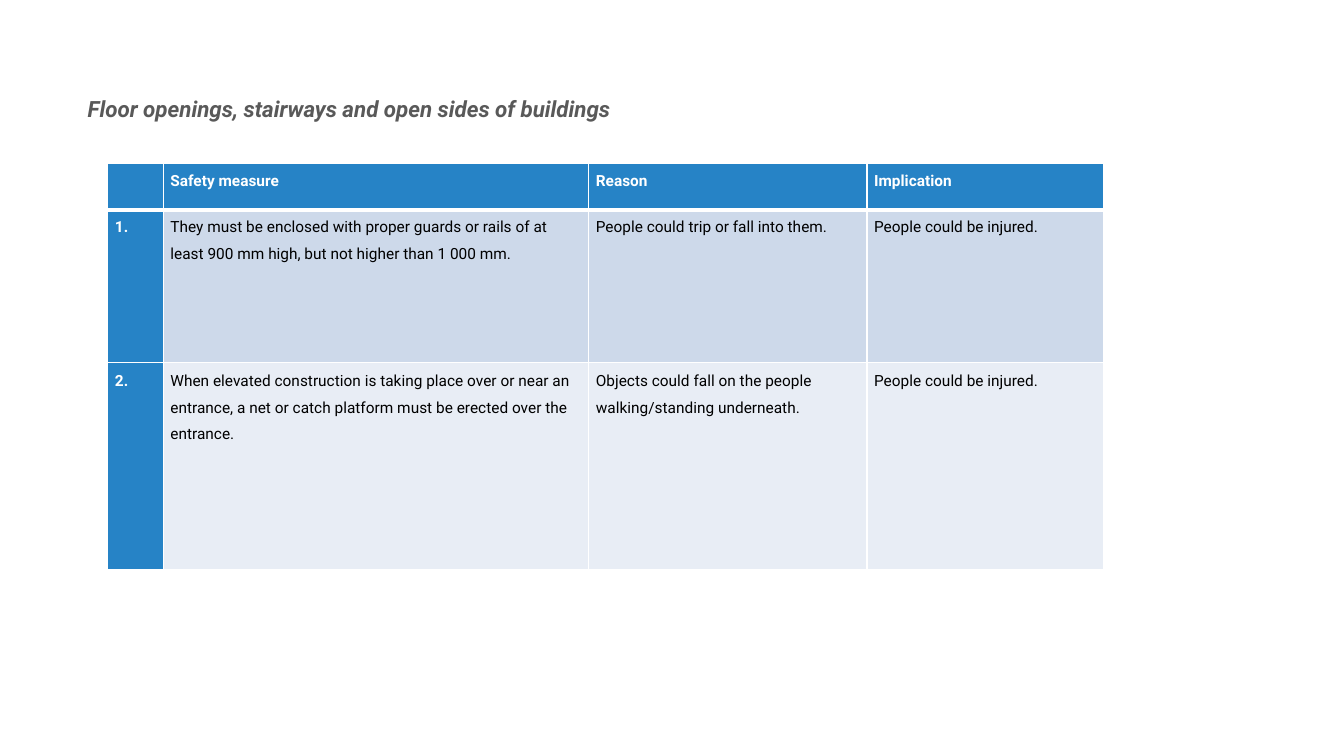
import pptx
import pptx.util
import pptx.dml.color
import pptx.enum.text
import pptx.oxml.ns
import lxml.etree

Inches = pptx.util.Inches
Pt = pptx.util.Pt

COLORS = {
    "blue": "2683C6",
    "mid": "CDD9EA",
    "pale": "E8EDF5",
    "white": "FFFFFF",
    "black": "000000",
    "gray": "595959",
}
FONT = "Roboto"
COLS = [0.55, 4.22, 2.76, 2.35]
ROWS = [0.46, 1.52, 2.05]
CELLS = [
    ["", "Safety measure", "Reason", "Implication"],
    [
        "1.",
        "They must be enclosed with proper guards or rails of at least 900 mm high, but not higher than 1 000 mm.",
        "People could trip or fall into them.",
        "People could be injured.",
    ],
    [
        "2.",
        "When elevated construction is taking place over or near an entrance, a net or catch platform must be erected over the entrance.",
        "Objects could fall on the people walking/standing underneath.",
        "People could be injured.",
    ],
]


def color(name):
    return pptx.dml.color.RGBColor.from_string(COLORS[name])


def add_run(para, text, size, tone, bold, italic=False):
    run = para.add_run()
    run.text = text
    font = run.font
    font.name = FONT
    font.size = Pt(size)
    font.bold = bold
    font.italic = italic
    font.color.rgb = color(tone)


def add_node(parent, tag, **attrs):
    node = lxml.etree.SubElement(parent, pptx.oxml.ns.qn(tag))
    for key, value in attrs.items():
        node.set(key, str(value))
    return node


def add_edge(cell, side, width):
    props = cell._tc.get_or_add_tcPr()
    line = add_node(props, "a:ln" + side, w=Pt(width))
    fill = add_node(line, "a:solidFill")
    add_node(fill, "a:srgbClr", val=COLORS["white"])


def fill_cell(cell, text, row, col):
    head = row == 0 or col == 0
    edges = {
        "L": 1,
        "R": 1,
        "T": 3 if row == 1 else 1,
        "B": 3 if row == 0 else 1,
    }
    for side, width in edges.items():
        add_edge(cell, side, width)
    cell.fill.solid()
    cell.fill.fore_color.rgb = color("blue" if head else ["mid", "pale"][row - 1])
    cell.margin_left = cell.margin_right = Inches(0.07)
    cell.margin_top = cell.margin_bottom = 0
    para = cell.text_frame.paragraphs[0]
    para.line_spacing = 1.5
    para.space_after = Pt(3)
    if text:
        add_run(para, text, 11, "white" if head else "black", head)


def add_grid(slide, left, top):
    frame = slide.shapes.add_table(
        len(ROWS), len(COLS), Inches(left), Inches(top),
        Inches(sum(COLS)), Inches(sum(ROWS)),
    )
    grid = frame.table
    for col, width in zip(grid.columns, COLS):
        col.width = Inches(width)
    for row, height in zip(grid.rows, ROWS):
        row.height = Inches(height)
    for row, texts in enumerate(CELLS):
        for col, text in enumerate(texts):
            fill_cell(grid.cell(row, col), text, row, col)


def fill_body(body, left, top, width, height):
    body.left, body.top = Inches(left), Inches(top)
    body.width, body.height = Inches(width), Inches(height)
    frame = body.text_frame
    frame.word_wrap = True
    frame.auto_size = pptx.enum.text.MSO_AUTO_SIZE.NONE
    frame.vertical_anchor = pptx.enum.text.MSO_ANCHOR.TOP
    para = frame.paragraphs[0]
    props = para._p.get_or_add_pPr()
    props.set("marL", "0")
    props.set("indent", "0")
    add_node(props, "a:buNone")
    para.line_spacing = 1.3
    para.space_before = Pt(0)
    add_run(
        para, "Floor openings, stairways and open sides of buildings",
        16, "gray", True, True,
    )


def main():
    deck = pptx.Presentation()
    deck.slide_width = Inches(13.33)
    deck.slide_height = Inches(7.5)
    slide = deck.slides.add_slide(deck.slide_layouts[1])
    title = slide.shapes.title.element
    title.getparent().remove(title)
    fill_body(slide.placeholders[1], 0.77, 0.81, 11.01, 6.23)
    add_grid(slide, 1.07, 1.62)
    deck.save("out.pptx")


if __name__ == "__main__":
    main()
